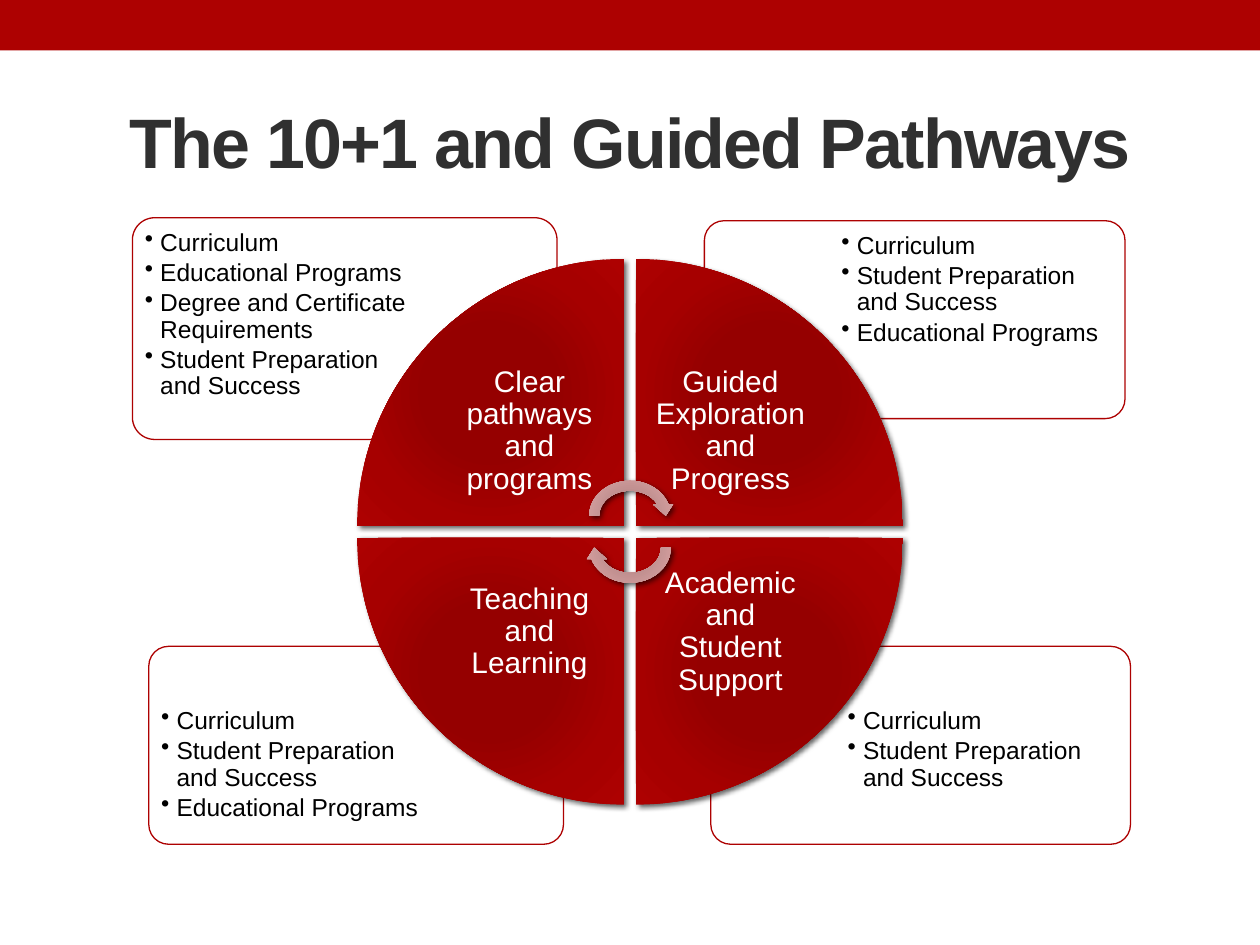
import pptx
import pptx.dml.color
import pptx.enum.shapes
import pptx.enum.text
import pptx.oxml
import pptx.oxml.ns
import pptx.util
from lxml import etree

Cm = pptx.util.Cm
Pt = pptx.util.Pt
RGBColor = pptx.dml.color.RGBColor
SHAPE = pptx.enum.shapes.MSO_SHAPE
ALIGN = pptx.enum.text.PP_ALIGN
ANCHOR = pptx.enum.text.MSO_ANCHOR
qn = pptx.oxml.ns.qn

RED = RGBColor(0xAD, 0x01, 0x01)
DARK = RGBColor(0x30, 0x30, 0x30)
BLACK = RGBColor(0, 0, 0)
WHITE = RGBColor(0xFF, 0xFF, 0xFF)
WEDGE_STOPS = [(0, "950000"), (34, "950000"), (70, "A60000"), (100, "AD0101")]
ARROW_STOPS = [(0, "BD8A8A"), (34, "BB8C8C"), (70, "D19C9C"), (100, "D3ABAB")]

TITLE = "The 10+1 and Guided Pathways"
CURRICULUM = "Curriculum"
PREPARATION = "Student Preparation and Success"
PROGRAMS = "Educational Programs"
QUADRANTS = [
    {"label": "Academic and Student Support", "col": 1, "row": 1, "rot": 180,
     "card": (14.33, 13.03, 8.46, 3.99), "items": [CURRICULUM, PREPARATION]},
    {"label": "Teaching and Learning", "col": 0, "row": 1, "rot": 270,
     "card": (3, 13.03, 8.36, 3.99), "items": [CURRICULUM, PREPARATION, PROGRAMS]},
    {"label": "Guided Exploration and Progress", "col": 1, "row": 0, "rot": 90,
     "card": (14.2, 4.45, 8.48, 3.99), "items": [CURRICULUM, PREPARATION, PROGRAMS]},
    {"label": "Clear pathways and programs", "col": 0, "row": 0, "rot": 0,
     "card": (2.67, 4.39, 8.56, 4.47),
     "items": [CURRICULUM, PROGRAMS, "Degree and Certificate Requirements", PREPARATION]},
]
CENTER = (12.7, 10.72)
HALF_GAP, WEDGE, LABEL = 0.12, 5.38, 3.81
ARROW_W, ARROW_H, ARROW_SHIFT = 1.85, 1.62, 0.32

TITLE_FONT = {"name": "Arial", "size": Pt(40), "bold": True}
ITEM_FONT = {"name": "Arial", "size": Pt(14)}
LABEL_FONT = {"name": "Arial", "size": Pt(17)}
ITEM_PARA = {"alignment": ALIGN.LEFT, "line_spacing": 0.9, "space_after": Pt(2.1)}
LABEL_PARA = {"alignment": ALIGN.CENTER, "line_spacing": 0.9}


def set_all(obj, values):
    for name, value in values.items():
        setattr(obj, name, value)


def add_shape(slide, kind, *box):
    sp = slide.shapes.add_shape(kind, *map(Cm, box))
    sp.shadow.inherit = False
    return sp


def add_glossy(slide, kind, stops, rot, *box):
    sp = slide.shapes.add_shape(kind, *map(Cm, box))
    sp.rotation = rot
    sp.line.fill.background()
    ns = pptx.oxml.ns.nsdecls("a")
    gs = "".join(f'<a:gs pos="{pos * 1000}"><a:srgbClr val="{c}"/></a:gs>' for pos, c in stops)
    spPr = sp._element.spPr
    spPr.insert(2, pptx.oxml.parse_xml(
        f'<a:gradFill {ns} rotWithShape="1"><a:gsLst>{gs}</a:gsLst><a:path path="circle">'
        '<a:fillToRect l="100000" t="100000" r="100000" b="100000"/></a:path></a:gradFill>'))
    spPr.append(pptx.oxml.parse_xml(
        f'<a:effectLst {ns}><a:outerShdw blurRad="38100" dist="25400" dir="2700000" '
        'rotWithShape="0"><a:srgbClr val="000000"><a:alpha val="60000"/></a:srgbClr>'
        '</a:outerShdw></a:effectLst>'))


def add_text(slide, box, lines, font, color, para, inset, anchor, bullet=False):
    tf = slide.shapes.add_textbox(*map(Cm, box)).text_frame
    set_all(tf, {"word_wrap": True, "vertical_anchor": anchor})
    set_all(tf, {f"margin_{side}": Cm(inset) for side in ("left", "top", "right", "bottom")})
    for i, line in enumerate(lines):
        p = tf.add_paragraph() if i else tf.paragraphs[0]
        set_all(p, para)
        r = p.add_run()
        r.text = line
        set_all(r.font, font)
        r.font.color.rgb = color
        if bullet:
            pPr = p._p.get_or_add_pPr()
            pPr.set("marL", str(Cm(0.31)))
            pPr.set("indent", str(-Cm(0.31)))
            etree.SubElement(pPr, qn("a:buChar")).set("char", "•")


def add_card(slide, quad):
    x, y, w, h = quad["card"]
    sp = add_shape(slide, SHAPE.ROUNDED_RECTANGLE, x, y, w, h)
    sp.adjustments[0] = 0.1
    sp.fill.solid()
    sp.fill.fore_color.rgb = WHITE
    clr = sp._element.spPr.find(".//" + qn("a:srgbClr"))
    etree.SubElement(clr, qn("a:alpha")).set("val", "90000")
    sp.line.color.rgb = RED
    sp.line.width = Pt(0.75)
    tw, th, edge = w * 0.68, h * 0.7, 0.1
    tx = x + (w - tw - edge if quad["col"] else edge)
    ty = y + (h - th - edge if quad["row"] else edge)
    add_text(slide, (tx, ty, tw, th), quad["items"], ITEM_FONT, BLACK, ITEM_PARA,
             0.15, ANCHOR.TOP, bullet=True)


def add_wedge(slide, quad):
    def corner(size):
        return [c + HALF_GAP if far else c - HALF_GAP - size
                for c, far in zip(CENTER, (quad["col"], quad["row"]))]

    add_glossy(slide, SHAPE.PIE_WEDGE, WEDGE_STOPS, quad["rot"], *corner(WEDGE), WEDGE, WEDGE)
    add_text(slide, (*corner(LABEL), LABEL, LABEL), [quad["label"]], LABEL_FONT, WHITE,
             LABEL_PARA, 0.33, ANCHOR.MIDDLE)


def main():
    prs = pptx.Presentation()
    prs.slide_width, prs.slide_height = Cm(25.4), Cm(19.05)
    s = prs.slides.add_slide(prs.slide_layouts[5])

    bar = add_shape(s, SHAPE.RECTANGLE, 0, 0, 25.4, 1.02)
    bar.fill.solid()
    bar.fill.fore_color.rgb = RED
    bar.line.fill.background()

    title = s.shapes.title
    set_all(title, {"left": Cm(1.27), "top": Cm(1.47), "width": Cm(22.86), "height": Cm(2.74)})
    title.text_frame.text = TITLE
    title.text_frame.vertical_anchor = ANCHOR.MIDDLE
    p = title.text_frame.paragraphs[0]
    p.alignment = ALIGN.CENTER
    r = p.runs[0]
    set_all(r.font, TITLE_FONT)
    r.font.color.rgb = DARK
    r._r.get_or_add_rPr().set("spc", "-100")

    for quad in QUADRANTS:
        add_card(s, quad)
    for quad in reversed(QUADRANTS):
        add_wedge(s, quad)
    for rot, shift in ((0, -ARROW_SHIFT), (180, ARROW_SHIFT)):
        add_glossy(s, SHAPE.CIRCULAR_ARROW, ARROW_STOPS, rot, CENTER[0] - ARROW_W / 2,
                   CENTER[1] - ARROW_H / 2 + shift, ARROW_W, ARROW_H)

    prs.save("out.pptx")


if __name__ == "__main__":
    main()
